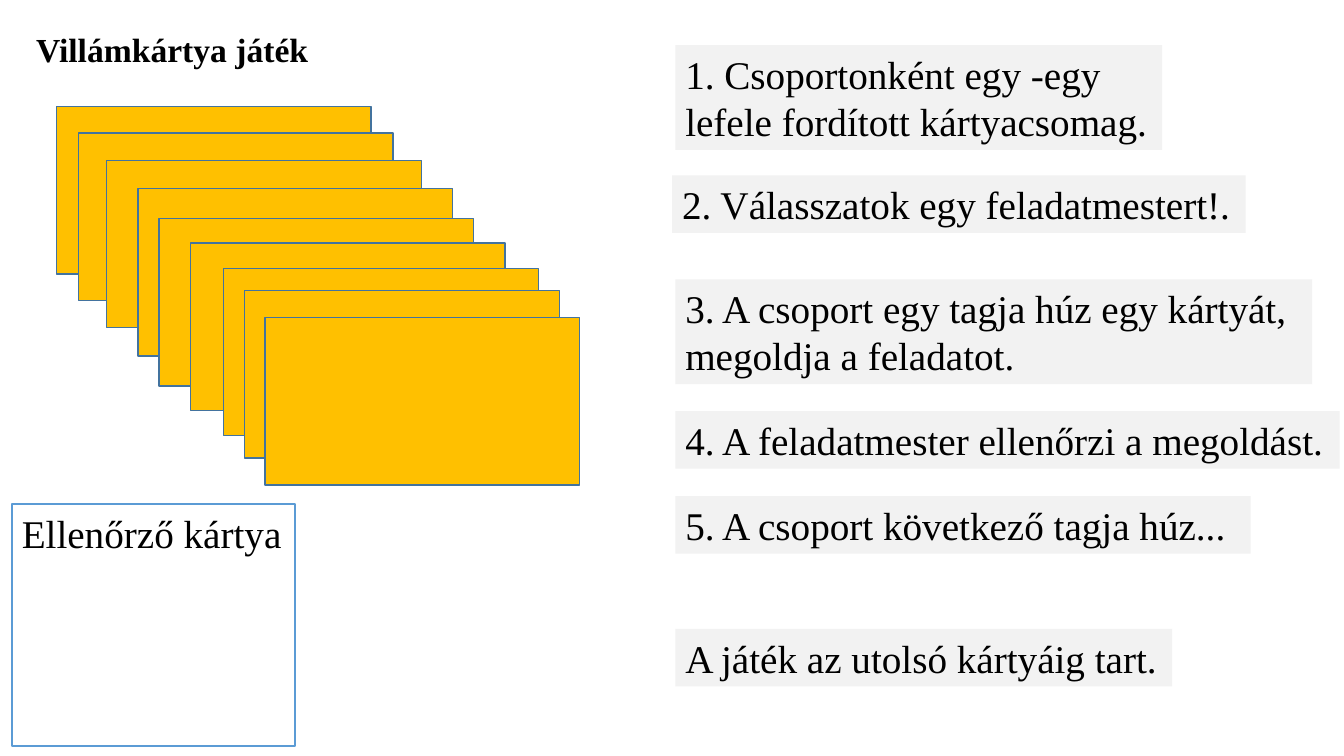
from pptx import Presentation
from pptx import util as u
from pptx.dml.color import RGBColor
from pptx.enum import shapes, text

BLACK = RGBColor(0x00, 0x00, 0x00)
WHITE = RGBColor(0xFF, 0xFF, 0xFF)
GOLD = RGBColor(0xFF, 0xC0, 0x00)
GREY = RGBColor(0xF2, 0xF2, 0xF2)
EDGE = RGBColor(0x43, 0x73, 0x9E)
BLUE = RGBColor(0x5B, 0x9B, 0xD5)
FONT = "Times New Roman"

# Left and top of each card in the pile, back to front (cm)
PILE = [(1.42, 2.69), (1.98, 3.35), (2.69, 4.04), (3.48, 4.75), (4.01, 5.51),
        (4.8, 6.12), (5.64, 6.76), (6.17, 7.32), (6.68, 8)]

# Left, top, width, height (cm) and lines of each rule
RULES = [
    (17.02, 1.14, 12.27, 2.64,
     ["1. Csoportonként egy -egy", "lefele fordított kártyacsomag."]),
    (16.94, 4.42, 14.45, 1.45, ["2. Válasszatok egy feladatmestert!."]),
    (17.02, 7.04, 16.05, 2.64,
     ["3. A csoport egy tagja húz egy kártyát,", "megoldja a feladatot."]),
    (17.02, 10.36, 16.74, 1.45, ["4. A feladatmester ellenőrzi a megoldást."]),
    (17.02, 12.5, 14.5, 1.45, ["5. A csoport következő tagja húz..."]),
    (17.02, 15.85, 12.52, 1.45, ["A játék az utolsó kártyáig tart."]),
]


def add_rect(slide, left, top, wide, high, fill, edge=None):
    rect = slide.shapes.add_shape(
        shapes.MSO_SHAPE.RECTANGLE,
        u.Cm(left), u.Cm(top), u.Cm(wide), u.Cm(high))
    rect.shadow.inherit = False
    rect.fill.solid()
    rect.fill.fore_color.rgb = fill
    if edge is None:
        rect.line.fill.background()
    else:
        rect.line.color.rgb = edge
        rect.line.width = u.Pt(1)
    return rect


def write(shape, lines, size=28, bold=False, wrap=True):
    frame = shape.text_frame
    frame.word_wrap = wrap
    frame.vertical_anchor = text.MSO_ANCHOR.TOP
    frame.text = "\n".join(lines)
    for para in frame.paragraphs:
        para.alignment = text.PP_ALIGN.LEFT
        para.font.name = FONT
        para.font.size = u.Pt(size)
        para.font.bold = bold
        para.font.color.rgb = BLACK
    return frame


def add_title(slide, line):
    box = slide.shapes.add_textbox(
        u.Cm(0.66), u.Cm(0.53), u.Cm(8.28), u.Cm(1.35))
    para = write(box, [line], size=24, bold=True).paragraphs[0]
    para.line_spacing = 1.07
    para.space_after = u.Pt(8)


def add_rule(slide, left, top, wide, high, lines):
    rect = add_rect(slide, left, top, wide, high, GREY)
    frame = write(rect, lines, wrap=False)
    frame.auto_size = text.MSO_AUTO_SIZE.SHAPE_TO_FIT_TEXT


def main():
    deck = Presentation()
    deck.slide_width, deck.slide_height = u.Cm(33.87), u.Cm(19.05)
    slide = deck.slides.add_slide(deck.slide_layouts[6])

    add_title(slide, "Villámkártya játék")

    # Pile of flash cards
    for left, top in PILE:
        add_rect(slide, left, top, 7.93, 4.22, GOLD, EDGE)

    # Rules of the game
    for rule in RULES:
        add_rule(slide, *rule)

    # Answer card
    card = add_rect(slide, 0.3, 12.7, 7.14, 6.1, WHITE, BLUE)
    write(card, ["Ellenőrző kártya"])

    deck.save("out.pptx")


if __name__ == "__main__":
    main()
